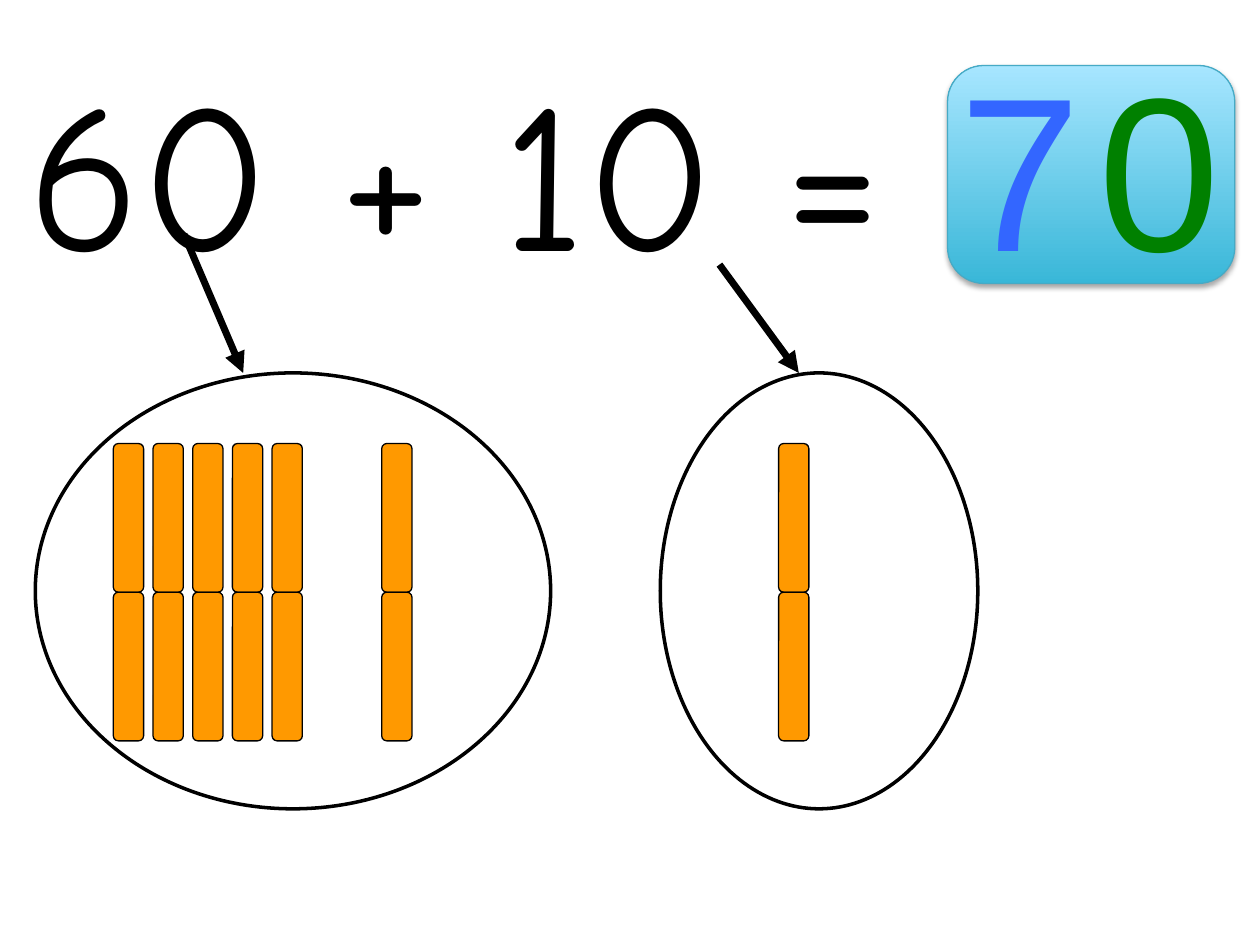
from lxml import etree
from pptx import Presentation, util as u
from pptx.dml.color import RGBColor
from pptx.enum import shapes, text
from pptx.oxml import ns

BLACK = RGBColor(0x00, 0x00, 0x00)
ORANGE = RGBColor(0xFF, 0x99, 0x00)
BLUE = RGBColor(0x33, 0x66, 0xFF)
GREEN = RGBColor(0x00, 0x80, 0x00)
AQUA_DARK = RGBColor(0x39, 0xB7, 0xD8)
AQUA_LIGHT = RGBColor(0xA7, 0xE6, 0xFF)
AQUA_EDGE = RGBColor(0x46, 0xAA, 0xC5)

COLUMNS, ROWS = 100, 75
ROD_TOP, ROD_WIDTH, ROD_HALF, ROD_STEP = 35.2, 2.4, 11.8, 3.15


def add_xml(parent, tag, **attributes):
    return etree.SubElement(parent, ns.qn(tag), attributes)


class Board:
    frame_format = {
        "word_wrap": True,
        "auto_size": text.MSO_AUTO_SIZE.SHAPE_TO_FIT_TEXT,
        "vertical_anchor": text.MSO_ANCHOR.TOP,
    }
    paragraph_format = {
        "alignment": text.PP_ALIGN.LEFT,
        "space_before": u.Pt(10.8),
    }

    def __init__(self, deck):
        self.column = deck.slide_width / COLUMNS
        self.row = deck.slide_height / ROWS
        self.slide = deck.slides.add_slide(deck.slide_layouts[5])

    def place(self, left, top, width, height):
        return (round(left * self.column), round(top * self.row),
                round(width * self.column), round(height * self.row))

    def apply(self, target, values):
        for name, value in values.items():
            setattr(target, name, value)

    def letter(self, holder, words, font, size, color):
        frame = holder.text_frame
        frame.text = words
        self.apply(frame, self.frame_format)
        paragraph = frame.paragraphs[0]
        self.apply(paragraph, self.paragraph_format)
        run = paragraph.runs[0]
        self.apply(run.font, {"name": font, "size": u.Pt(size)})
        run.font.color.rgb = color

    def title(self, area, words):
        heading = self.slide.shapes.title
        self.apply(heading, dict(zip(("left", "top", "width", "height"),
                                     self.place(*area))))
        self.letter(heading, words, "Comic Neue", 120, BLACK)

    def digit(self, area, words, color):
        box = self.slide.shapes.add_textbox(*self.place(*area))
        self.letter(box, words, "Arial", 125, color)

    def outline(self, kind, area, edge, weight, parent=None):
        figure = (parent or self.slide).shapes.add_shape(
            kind, *self.place(*area))
        figure.shadow.inherit = False
        figure.fill.background()
        figure.line.color.rgb = edge
        figure.line.width = u.Pt(weight)
        return figure

    def answer_card(self, area):
        card = self.outline(shapes.MSO_SHAPE.ROUNDED_RECTANGLE,
                            area, AQUA_EDGE, 0.75)
        card.fill.gradient()
        card.fill.gradient_angle = 90
        for stop, color in zip(card.fill.gradient_stops,
                               (AQUA_DARK, AQUA_LIGHT)):
            stop.color.rgb = color
        effects = card.element.spPr.find(ns.qn("a:effectLst"))
        shadow = add_xml(effects, "a:outerShdw", blurRad=str(u.Pt(3.1)),
                         dist=str(u.Pt(1.8)), dir="5400000", rotWithShape="0")
        tint = add_xml(shadow, "a:srgbClr", val=str(BLACK))
        add_xml(tint, "a:alpha", val="35000")

    def ten_rod(self, left):
        rod = self.slide.shapes.add_group_shape()
        for half in range(2):
            area = left, ROD_TOP + half * ROD_HALF, ROD_WIDTH, ROD_HALF
            block = self.outline(shapes.MSO_SHAPE.ROUNDED_RECTANGLE,
                                 area, BLACK, 0.75, rod)
            block.fill.solid()
            block.fill.fore_color.rgb = ORANGE

    def arrow(self, start, end):
        pointer = self.slide.shapes.add_connector(
            shapes.MSO_CONNECTOR.STRAIGHT, *self.place(*start, *end))
        pointer.line.color.rgb = BLACK
        pointer.line.width = u.Pt(4)
        properties = pointer.element.spPr
        add_xml(properties.find(ns.qn("a:ln")), "a:tailEnd", type="triangle")
        add_xml(properties, "a:effectLst")

    def ring(self, area):
        self.outline(shapes.MSO_SHAPE.OVAL, area, BLACK, 2)


def main():
    deck = Presentation()
    deck.slide_width, deck.slide_height = u.Inches(10), u.Inches(7.5)
    board = Board(deck)

    board.answer_card((75.2, 5.2, 22.8, 17.3))
    board.title((1.2, 2.8, 82.7, 21), "60 + 10 =")

    six_tens = [9 + ROD_STEP * place for place in range(5)] + [30.3]
    one_ten = [61.8]
    for left in six_tens + one_ten:
        board.ten_rod(left)

    for left, words, color in ((75.2, "7", BLUE), (86.2, "0", GREEN)):
        board.digit((left, 2.1, 11.8, 22), words, color)

    board.arrow((14.6, 18.6), (19.3, 29.6))
    board.arrow((57.1, 21), (63.4, 29.6))
    for left, width in ((2.8, 40.9), (52.4, 25.2)):
        board.ring((left, 29.6, width, 34.6))

    deck.save("out.pptx")


if __name__ == "__main__":
    main()
